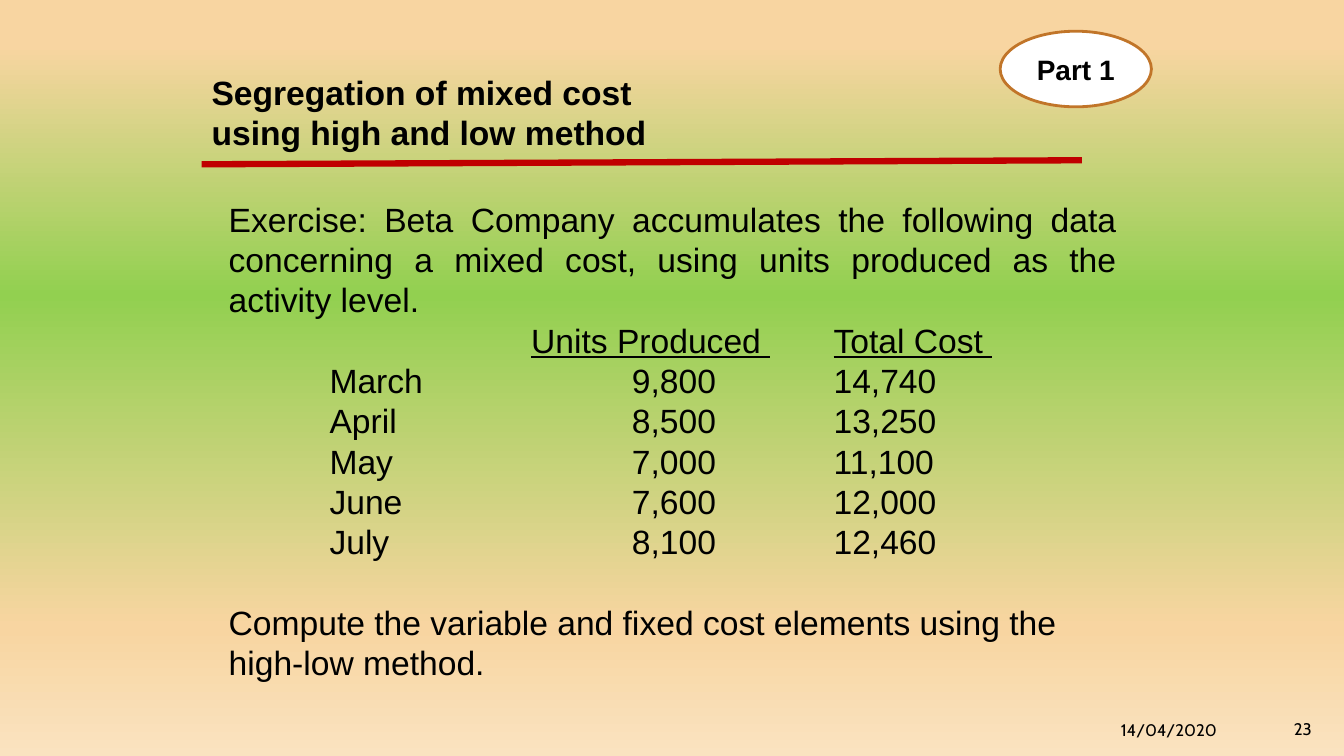
from lxml import etree
from pptx import Presentation
from pptx.dml.color import RGBColor
from pptx.enum.shapes import MSO_CONNECTOR, MSO_SHAPE
from pptx.enum.text import MSO_ANCHOR, PP_ALIGN
from pptx.oxml import parse_xml
from pptx.oxml.ns import nsdecls, qn
from pptx.util import Inches, Pt

LEFT, CENTER, RIGHT = PP_ALIGN.LEFT, PP_ALIGN.CENTER, PP_ALIGN.RIGHT
JUSTIFY = PP_ALIGN.JUSTIFY
MIDDLE = MSO_ANCHOR.MIDDLE
ELLIPSE = MSO_SHAPE.OVAL
STRAIGHT = MSO_CONNECTOR.STRAIGHT

BLACK = RGBColor(0x00, 0x00, 0x00)
WHITE = RGBColor(0xFF, 0xFF, 0xFF)
RED = RGBColor(0xC0, 0x00, 0x00)
BROWN = RGBColor(0xC1, 0x75, 0x29)
PEACH = RGBColor(0xF8, 0xD5, 0xA1)
GREEN = RGBColor(0x92, 0xD0, 0x50)
CREAM = RGBColor(0xFA, 0xE3, 0xC0)

BACKGROUND_STOPS = [(6, PEACH), (39, GREEN), (83, PEACH), (100, CREAM)]
LINE_PITCH = 28.8
HEADER_TABS = (3, 6)
ROW_TABS = (1, 4, 6)

INTRO = ("Exercise: Beta Company accumulates the following data concerning "
         "a mixed cost, using units produced as the activity level.")
TASK = ("Compute the variable and ﬁxed cost elements using the "
        "high-low method.")
MONTHLY_COSTS = [
    ("March", "9,800", "14,740"),
    ("April", "8,500", "13,250"),
    ("May", "7,000", "11,100"),
    ("June", "7,600", "12,000"),
    ("July", "8,100", "12,460"),
]


def set_background(slide, stops):
    """Fill the slide with a top-to-bottom gradient."""
    stop_xml = "".join(
        f'<a:gs pos="{percent * 1000}"><a:srgbClr val="{color}"/></a:gs>'
        for percent, color in stops)
    background = parse_xml(
        f'<p:bg {nsdecls("p", "a")}><p:bgPr><a:gradFill rotWithShape="1">'
        f'<a:gsLst>{stop_xml}</a:gsLst><a:lin ang="5400000" scaled="0"/>'
        '</a:gradFill><a:effectLst/></p:bgPr></p:bg>')
    slide.element.find(qn("p:cSld")).insert(0, background)


def add_tab_stops(paragraph, positions):
    tab_list = etree.SubElement(paragraph._p.get_or_add_pPr(), qn("a:tabLst"))
    for position in positions:
        etree.SubElement(tab_list, qn("a:tab"),
                         pos=str(Inches(position)), algn="l")


def write(frame, text, size=24, font="Arial", bold=False, align=LEFT,
          pitch=None, before=None, tabs=(), underlined=()):
    """Add a paragraph; text is a string or a list of runs."""
    paragraph = frame.paragraphs[0]
    if paragraph.runs:
        paragraph = frame.add_paragraph()
    paragraph.alignment = align
    if pitch:
        paragraph.line_spacing = Pt(pitch)
    if before:
        paragraph.space_before = Pt(before)
    if tabs:
        add_tab_stops(paragraph, tabs)
    for part in [text] if isinstance(text, str) else text:
        run = paragraph.add_run()
        run.text = part
        run.font.name = font
        run.font.size = Pt(size)
        run.font.bold = bold
        run.font.color.rgb = BLACK
        if part in underlined:
            run.font.underline = True


def add_text_frame(slide, left, top, width, height):
    box = slide.shapes.add_textbox(Inches(left), Inches(top),
                                   Inches(width), Inches(height))
    box.text_frame.word_wrap = True
    return box.text_frame


def add_rule(slide, start, end, color, width):
    rule = slide.shapes.add_connector(
        STRAIGHT, *(Inches(value) for value in (*start, *end)))
    rule.line.color.rgb = color
    rule.line.width = Pt(width)
    etree.SubElement(rule.element.spPr, qn("a:effectLst"))


def add_badge(slide, text, left, top, width, height):
    badge = slide.shapes.add_shape(ELLIPSE, Inches(left), Inches(top),
                                   Inches(width), Inches(height))
    badge.shadow.inherit = False
    badge.fill.solid()
    badge.fill.fore_color.rgb = WHITE
    badge.line.color.rgb = BROWN
    badge.line.width = Pt(2)
    badge.text_frame.vertical_anchor = MIDDLE
    write(badge.text_frame, text, size=20, bold=True, align=CENTER)


def add_exercise(slide):
    exercise = add_text_frame(slide, 2.17, 1.92, 9, 4.95)
    write(exercise, INTRO, align=JUSTIFY, pitch=LINE_PITCH)
    # Monthly figures in tabbed columns
    units, cost = "Units Produced ", "Total Cost "
    write(exercise, ["\t", units, "\t", cost], pitch=LINE_PITCH,
          tabs=HEADER_TABS, underlined=(units, cost))
    for row in MONTHLY_COSTS:
        write(exercise, "\t" + "\t".join(row), pitch=LINE_PITCH, tabs=ROW_TABS)
    write(exercise, TASK, pitch=LINE_PITCH, before=LINE_PITCH)


def main():
    presentation = Presentation()
    presentation.slide_width = Inches(13.33)
    presentation.slide_height = Inches(7.5)
    slide = presentation.slides.add_slide(presentation.slide_layouts[6])
    set_background(slide, BACKGROUND_STOPS)

    add_exercise(slide)

    # Title, rule and part badge
    title = add_text_frame(slide, 2, 0.66, 8.82, 0.91)
    for line in ("Segregation of mixed cost", "using high and low method"):
        write(title, line, bold=True, pitch=LINE_PITCH)
    add_rule(slide, (2, 1.63), (10.73, 1.59), RED, 4.5)
    add_badge(slide, "Part 1", 9.92, 0.31, 1.5, 0.75)

    # Footer
    date = add_text_frame(slide, 11.02, 7.09, 2.14, 0.26)
    write(date, "14/04/2020", size=12, font="Cabin")
    page_number = add_text_frame(slide, 12, 7.08, 1.11, 0.27)
    write(page_number, "23", size=12, font="Cabin", align=RIGHT)

    presentation.save("out.pptx")


if __name__ == "__main__":
    main()
